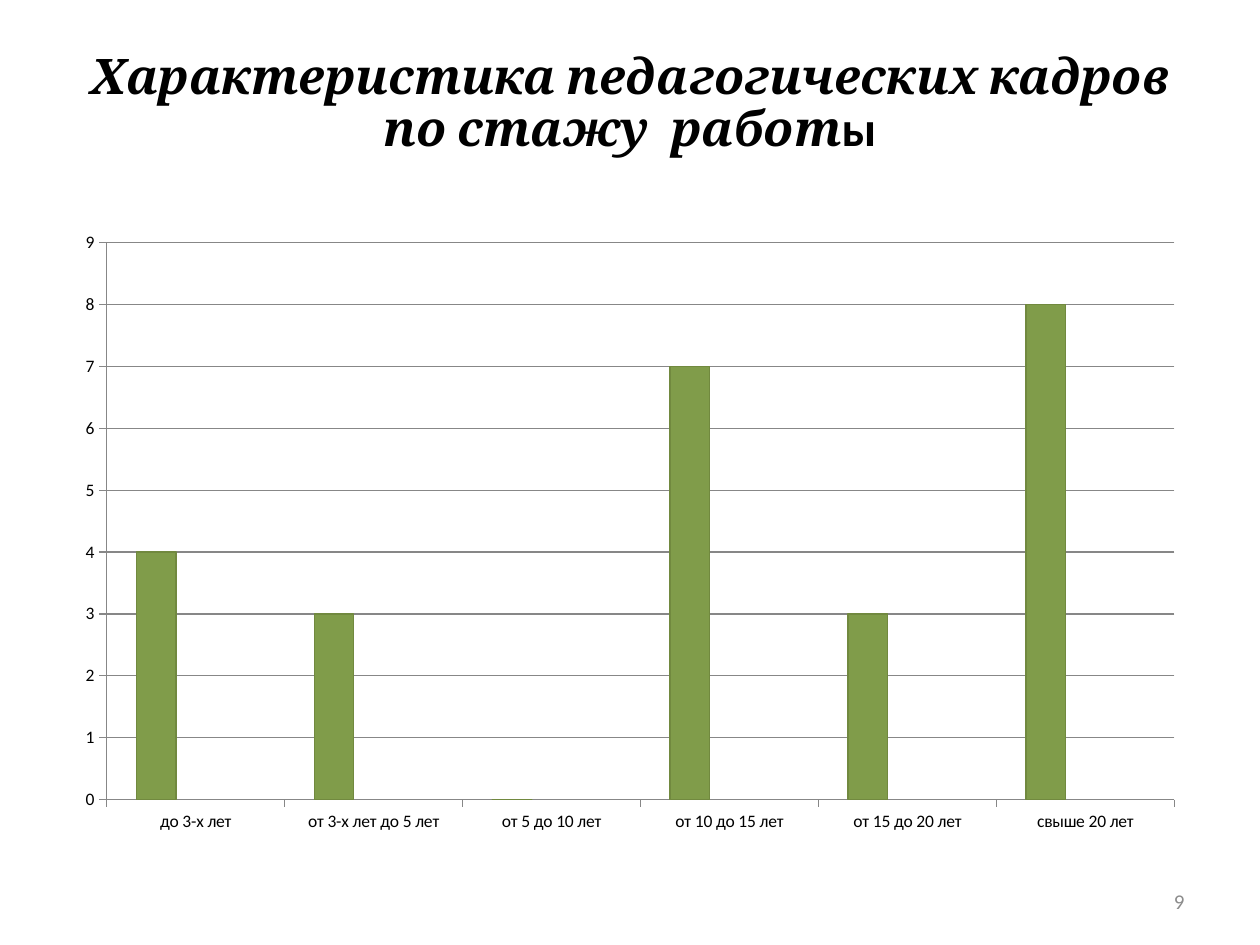
from pptx import Presentation
from pptx.chart.data import CategoryChartData
from pptx.dml.color import RGBColor
from pptx.enum.chart import XL_CHART_TYPE, XL_TICK_MARK
from pptx.enum.text import MSO_ANCHOR, PP_ALIGN
from pptx.util import Inches, Pt

COLUMNS = XL_CHART_TYPE.COLUMN_CLUSTERED
CROSS, OUTSIDE = XL_TICK_MARK.CROSS, XL_TICK_MARK.OUTSIDE
MIDDLE = MSO_ANCHOR.MIDDLE
CENTER, RIGHT = PP_ALIGN.CENTER, PP_ALIGN.RIGHT

COLORS = {"text": "000000", "number": "8C8C8C", "axis": "878787",
          "bar": "809C4A", "edge": "71893F"}


def color(name):
    return RGBColor.from_string(COLORS[name])


def add_text(para, text, font="Calibri", size=12, fill="text", bold=False, italic=False):
    span = para.add_run()
    span.text = text
    span.font.name = font
    span.font.size = Pt(size)
    span.font.bold = bold
    span.font.italic = italic
    span.font.color.rgb = color(fill)


deck = Presentation()
deck.slide_width, deck.slide_height = Inches(10), Inches(7.5)
page = deck.slides.add_slide(deck.slide_layouts[5])
margin = int(deck.slide_width * 0.05)
content_width = deck.slide_width - 2 * margin

# Title
title = page.shapes.title
title.left, title.top = margin, int(deck.slide_height * 0.04)
title.width, title.height = content_width, Inches(1.25)
frame = title.text_frame
frame.word_wrap = True
frame.vertical_anchor = MIDDLE
frame.margin_bottom = Inches(0.24)
para = frame.paragraphs[0]
para.alignment = CENTER
para.line_spacing = 0.9
add_text(para, "Характеристика педагогических кадров по стажу  работ",
         font="Cambria", size=28, bold=True, italic=True)
add_text(para, "ы", size=28, bold=True)

# Chart: the two empty series keep their place in each group
data = CategoryChartData(number_format="General")
data.categories = ["до 3-х лет", "от 3-х лет до 5 лет", "от 5 до 10 лет",
                   "от 10 до 15 лет", "от 15 до 20 лет", "свыше 20 лет"]
data.add_series("Series 1", [4, 3, 0, 7, 3, 8])
for name in ("Series 2", "Series 3"):
    data.add_series(name, [None] * 6)
chart = page.shapes.add_chart(COLUMNS, margin, Inches(1.75), content_width,
                              Inches(4.95), data).chart
chart.has_legend = False
chart.has_title = False
chart.font.name = "Calibri"
chart.font.size = Pt(10)
chart.font.color.rgb = color("text")

plot = chart.plots[0]
plot.gap_width = 150
plot.overlap = 0
plot.vary_by_categories = False
for series in plot.series:
    series.format.fill.solid()
    series.format.fill.fore_color.rgb = color("bar")
    series.format.line.color.rgb = color("edge")
    series.format.line.width = Pt(0.75)

# Axes and gridlines
values = chart.value_axis
values.minimum_scale, values.maximum_scale, values.major_unit = 0, 9, 1
values.has_major_gridlines = True
for axis in (chart.category_axis, values):
    axis.major_tick_mark = OUTSIDE
for line in (chart.category_axis.format.line, values.format.line,
             values.major_gridlines.format.line):
    line.color.rgb = color("axis")
    line.width = Pt(0.75)

# Slide number
number_width = Inches(2.33)
box = page.shapes.add_textbox(deck.slide_width - margin - number_width, Inches(6.95),
                              number_width, Inches(0.4))
box.text_frame.word_wrap = True
box.text_frame.vertical_anchor = MIDDLE
para = box.text_frame.paragraphs[0]
para.alignment = RIGHT
add_text(para, "9", fill="number")

deck.save("out.pptx")
